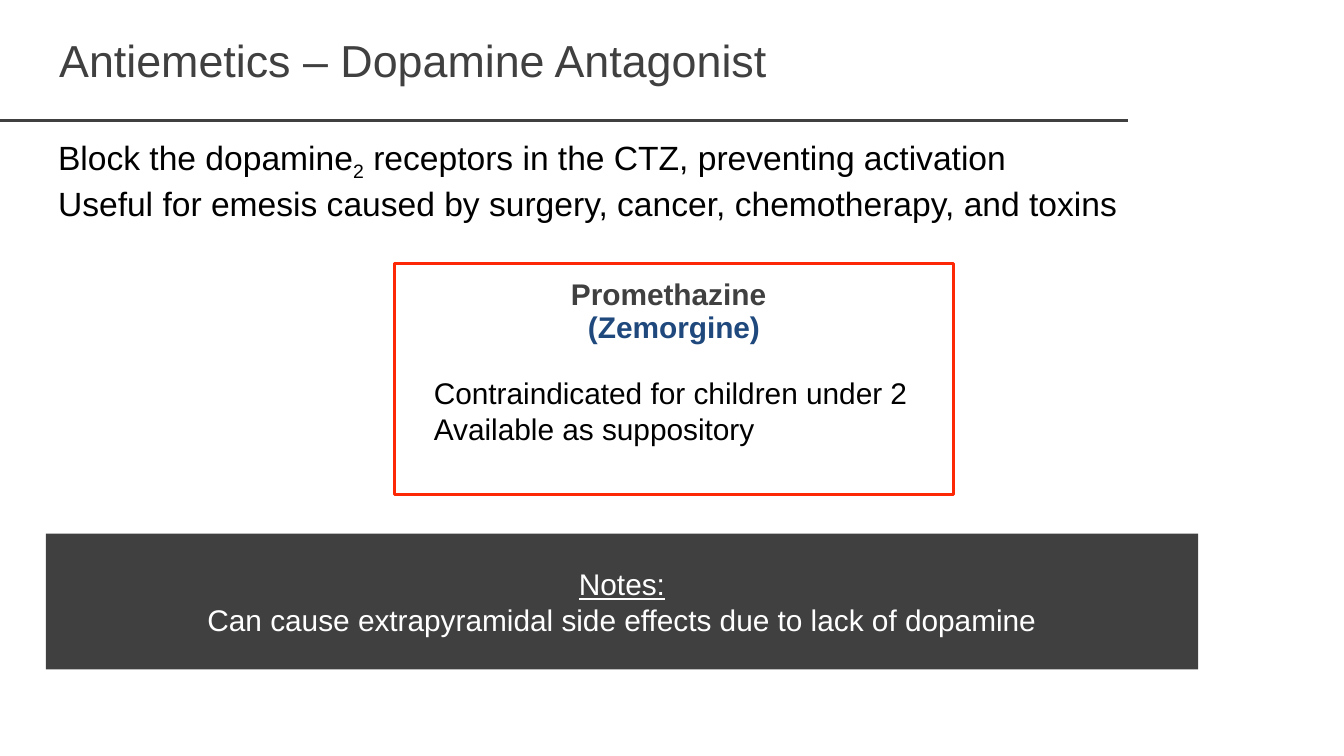
"""Build the slide on dopamine antagonist antiemetics."""
import pptx
import pptx.dml.color
import pptx.enum.shapes
import pptx.enum.text
import pptx.oxml.ns
import pptx.util
from lxml import etree

COLORS = {"charcoal": "404040", "red": "FD2906", "navy": "1F497D",
          "black": "000000", "white": "FFFFFF"}
ALIGN = pptx.enum.text.PP_ALIGN
ANCHOR = pptx.enum.text.MSO_ANCHOR

deck = pptx.Presentation()
deck.slide_width = pptx.util.Inches(10)
deck.slide_height = deck.slide_width * 9 // 16
column = deck.slide_width / 100
row = deck.slide_height / 100
slide = deck.slides.add_slide(deck.slide_layouts[5])
shapes = slide.shapes


def grid(left, top, width, height):
    return [round(n * unit) for n, unit in
            zip((left, top, width, height), (column, row, column, row))]


def write(holder, lines, size=16, color="black", bold=False, align=ALIGN.LEFT,
          anchor=ANCHOR.MIDDLE, underlined=(), subscripts=()):
    frame = holder.text_frame
    frame.word_wrap = True
    frame.auto_size = pptx.enum.text.MSO_AUTO_SIZE.NONE
    frame.vertical_anchor = anchor
    for index, line in enumerate(lines):
        paragraph = frame.paragraphs[0] if index == 0 else frame.add_paragraph()
        paragraph.alignment = align
        for part in [line] if isinstance(line, str) else line:
            run = paragraph.add_run()
            run.text = part
            run.font.name = "Arial"
            run.font.size = pptx.util.Pt(size)
            run.font.bold = bold
            run.font.underline = part in underlined
            run.font.color.rgb = pptx.dml.color.RGBColor.from_string(COLORS[color])
            if part in subscripts:
                run.font._element.set("baseline", "-25000")


heading = shapes.title
heading.left, heading.top, heading.width, heading.height = grid(3.4, 2.3, 80.3, 11.2)
write(heading, ["Antiemetics – Dopamine Antagonist"], size=24, color="charcoal")

rule_left, rule_top, rule_width, _ = grid(-0.1, 15.92, 84, 0)
heading_rule = shapes.add_connector(
    pptx.enum.shapes.MSO_CONNECTOR.STRAIGHT,
    rule_left, rule_top, rule_left + rule_width, rule_top)
heading_rule.line.color.rgb = pptx.dml.color.RGBColor.from_string(COLORS["charcoal"])
heading_rule.line.width = pptx.util.Pt(1.5)
etree.SubElement(heading_rule._element.spPr, pptx.oxml.ns.qn("a:effectLst"))

drug_frame = shapes.add_shape(
    pptx.enum.shapes.MSO_SHAPE.RECTANGLE, *grid(29.36, 34.84, 41.6, 30.6))
drug_frame.shadow.inherit = False
drug_frame.fill.background()
drug_frame.line.color.rgb = pptx.dml.color.RGBColor.from_string(COLORS["red"])
drug_frame.line.width = pptx.util.Pt(1.5)

notes_panel = shapes.add_shape(
    pptx.enum.shapes.MSO_SHAPE.RECTANGLE, *grid(3.42, 70.6, 85.72, 17.97))
notes_panel.shadow.inherit = False
notes_panel.fill.solid()
notes_panel.fill.fore_color.rgb = pptx.dml.color.RGBColor.from_string(COLORS["charcoal"])
notes_panel.line.fill.background()
write(notes_panel,
      ["Notes:", "Can cause extrapyramidal side effects due to lack of dopamine"],
      color="white", align=ALIGN.CENTER, underlined=["Notes:"])

drug_names = [
    ("Promethazine", "charcoal", (31.5, 36.7, 36.5, 4.27)),
    ("(Zemorgine)", "navy", (29.7, 41.65, 40.9, 3.02)),
]
for drug_name, color, place in drug_names:
    write(shapes.add_textbox(*grid(*place)), [drug_name],
          color=color, bold=True, align=ALIGN.CENTER)

statements = [
    ([("Block the dopamine", "2", " receptors in the CTZ, preventing activation"),
      "Useful for emesis caused by surgery, cancer, chemotherapy, and toxins"],
     18, (3.34, 17.24, 81.3, 17.97)),
    (["Contraindicated for children under 2", "Available as suppository"],
     16, (31.3, 48.71, 37.7, 11.39)),
]
for lines, size, place in statements:
    write(shapes.add_textbox(*grid(*place)), lines, size=size,
          anchor=ANCHOR.TOP, subscripts=["2"])

deck.save("out.pptx")
